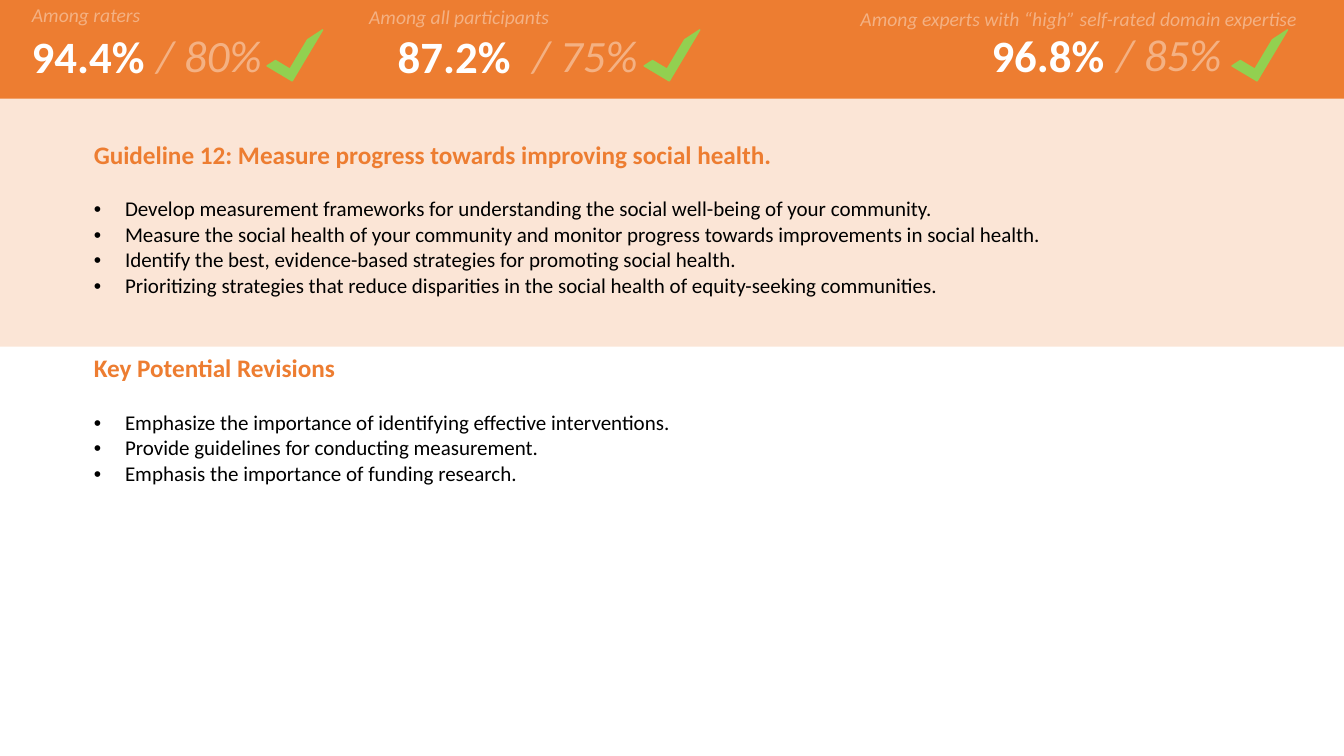
"""Build the Guideline 12 slide with its agreement scores and proposed revisions."""
import pptx
import pptx.dml.color
import pptx.enum.shapes
import pptx.enum.text
import pptx.oxml
import pptx.util
from pptx.util import Inches, Pt

ORANGE, PALE, PEACH = "ED7D31", "FBE5D6", "F4B183"
GREEN, WHITE, BLACK = "92D050", "FFFFFF", "000000"

BANDS = [((0, 0.97, 13.33, 2.47), PALE), ((0, 0, 13.33, 0.98), ORANGE)]

SCORES = [
    {"label": ("Among raters", 0.21, -0.02, 1.29),
     "score": ("94.4% ", 0.21, 0.24, 1.43),
     "target": ("/ 80%", 1.45, 0.23, 1.25), "check": 2.78},
    {"label": ("Among all participants", 3.55, 0, 2.01),
     "score": ("87.2% ", 3.84, 0.24, 1.43),
     "target": ("/ 75%", 5.18, 0.23, 1.25), "check": 6.52},
    {"label": ("Among experts with “high” self-rated domain expertise", 8.36, 0.02, 4.68),
     "score": ("96.8% ", 9.73, 0.23, 1.43),
     "target": ("/ 85%", 10.97, 0.22, 1.25), "check": 12.35},
]
STYLES = {
    "label": {"height": 0.34, "color": PEACH, "font": {"size": Pt(14), "italic": True}},
    "score": {"height": 0.64, "color": WHITE, "font": {"size": Pt(32), "bold": True}},
    "target": {"height": 0.64, "color": PEACH, "font": {"size": Pt(32), "italic": True}},
}

SECTIONS = [
    {"top": 1.38, "height": 1.57, "fill": PALE,
     "heading": "Guideline 12: Measure progress towards improving social health.",
     "bullets": [
         "Develop measurement frameworks for understanding the social well-being of your community.",
         "Measure the social health of your community and monitor progress towards improvements in social health.",
         "Identify the best, evidence-based strategies for promoting social health.",
         "Prioritizing strategies that reduce disparities in the social health of equity-seeking communities.",
     ]},
    {"top": 3.5, "height": 1.32, "fill": None,
     "heading": "Key Potential Revisions",
     "bullets": [
         "Emphasize the importance of identifying effective interventions.",
         "Provide guidelines for conducting measurement.",
         "Emphasis the importance of funding research.",
     ]},
]
NAMESPACE = 'xmlns:a="http://schemas.openxmlformats.org/drawingml/2006/main"'


def rgb(value):
    return pptx.dml.color.RGBColor.from_string(value)


def set_all(target, values):
    for name, value in values.items():
        setattr(target, name, value)


def add_text(paragraph, text, color, font):
    run = paragraph.add_run()
    run.text = text
    set_all(run.font, {"name": "Calibri", **font})
    run.font.color.rgb = rgb(color)


def add_shape(slide, kind, box, color):
    shape = slide.shapes.add_shape(kind, *map(Inches, box))
    shape.shadow.inherit = False
    shape.fill.solid()
    shape.fill.fore_color.rgb = rgb(color)
    shape.line.fill.background()
    return shape


def add_check(slide, left):
    check = add_shape(slide, pptx.enum.shapes.MSO_SHAPE.HALF_FRAME, (left, 0.18, 0.29, 0.59), GREEN)
    check.rotation = 210.8
    check.adjustments[0], check.adjustments[1] = 0.306, 0.273
    check.line.color.rgb = rgb(GREEN)
    check.line.width = Pt(1)


def add_label(slide, content, style):
    text, left, top, width = content
    box = slide.shapes.add_textbox(*map(Inches, (left, top, width, style["height"])))
    set_all(box.text_frame, {"word_wrap": False,
                             "auto_size": pptx.enum.text.MSO_AUTO_SIZE.SHAPE_TO_FIT_TEXT})
    paragraph = box.text_frame.paragraphs[0]
    paragraph.alignment = pptx.enum.text.PP_ALIGN.CENTER
    add_text(paragraph, text, style["color"], style["font"])


def add_bullet(paragraph):
    properties = paragraph._p.get_or_add_pPr()
    properties.set("marL", str(Inches(0.31)))
    properties.set("indent", str(-Inches(0.31)))
    for xml in (f'<a:buFont {NAMESPACE} typeface="Arial"/>', f'<a:buChar {NAMESPACE} char="•"/>'):
        properties.append(pptx.oxml.parse_xml(xml))


def add_section(slide, section):
    box = (0.92, section["top"], 11.5, section["height"])
    table = slide.shapes.add_table(1, 1, *map(Inches, box)).table
    set_all(table, {"first_row": False, "horz_banding": False})
    cell = table.cell(0, 0)
    margins = dict.fromkeys(("margin_left", "margin_right", "margin_top", "margin_bottom"), Inches(0.01))
    set_all(cell, {**margins, "vertical_anchor": pptx.enum.text.MSO_ANCHOR.MIDDLE})
    if section["fill"]:
        cell.fill.solid()
        cell.fill.fore_color.rgb = rgb(section["fill"])
    else:
        cell.fill.background()
    for position, side in enumerate("LRTB"):
        border = pptx.oxml.parse_xml(f'<a:ln{side} {NAMESPACE} w="0"><a:noFill/></a:ln{side}>')
        cell._tc.get_or_add_tcPr().insert(position, border)
    heading = cell.text_frame.paragraphs[0]
    heading.space_after = Pt(18.3)
    add_text(heading, section["heading"], ORANGE, {"size": Pt(18), "bold": True})
    for text in section["bullets"]:
        paragraph = cell.text_frame.add_paragraph()
        add_bullet(paragraph)
        add_text(paragraph, text, BLACK, {"size": Pt(15), "bold": False})


def main():
    presentation = pptx.Presentation()
    set_all(presentation, {"slide_width": Inches(13.33), "slide_height": Inches(7.5)})
    slide = presentation.slides.add_slide(presentation.slide_layouts[6])
    for box, color in BANDS:
        add_shape(slide, pptx.enum.shapes.MSO_SHAPE.RECTANGLE, box, color)
    for score in SCORES:
        for role, style in STYLES.items():
            add_label(slide, score[role], style)
        add_check(slide, score["check"])
    for section in SECTIONS:
        add_section(slide, section)
    presentation.save("out.pptx")


if __name__ == "__main__":
    main()
